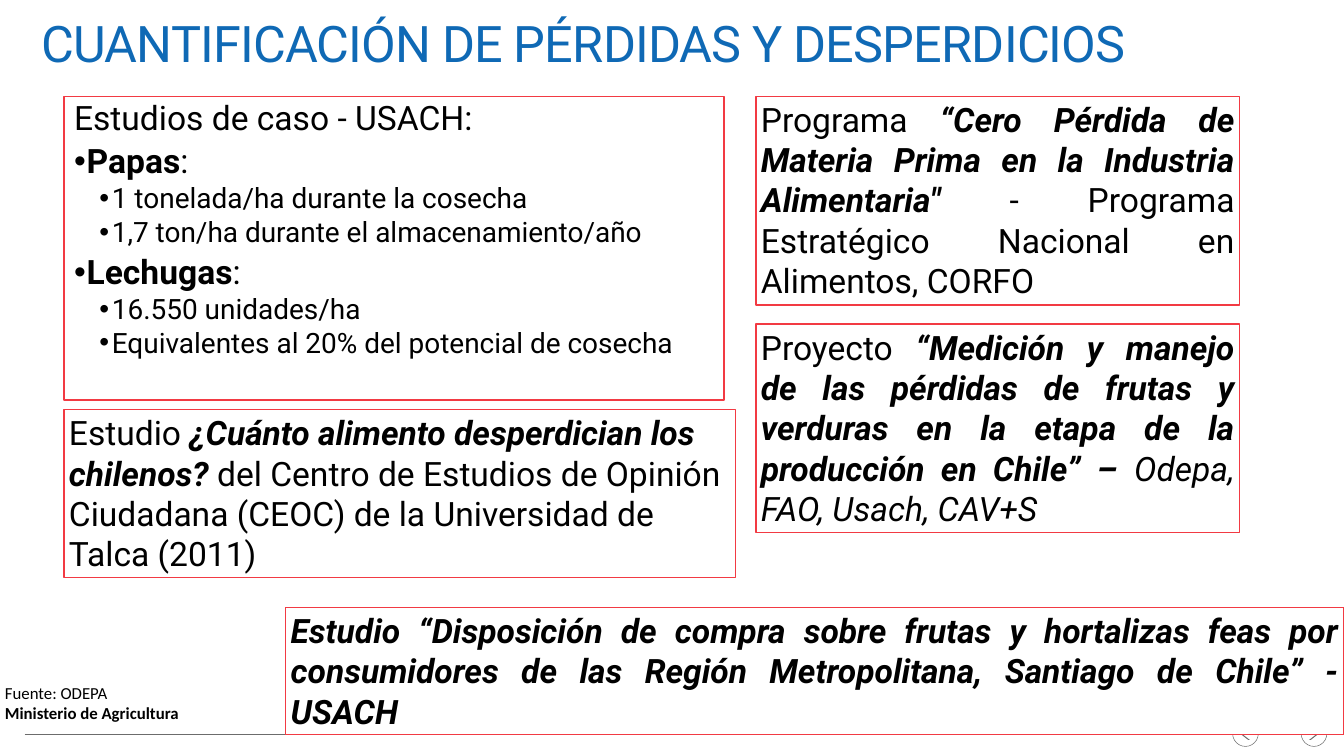
from lxml import etree
from pptx import Presentation, util as u
from pptx.dml.color import RGBColor
from pptx.enum import shapes, text
from pptx.oxml.ns import qn

BLUE = RGBColor(0x0F, 0x69, 0xB5)
RED = RGBColor(0xF2, 0x3A, 0x43)
GRAY = RGBColor(0x6C, 0x6C, 0x6C)
BLACK = RGBColor(0, 0, 0)
WHITE = RGBColor(0xFF, 0xFF, 0xFF)

BOLD = {"bold": True}
ITALIC = {"italic": True}
STRONG = {"bold": True, "italic": True}
JUSTIFY = text.PP_ALIGN.JUSTIFY
LEFT = text.PP_ALIGN.LEFT

CASES = [
    ("intro", [("Estudios de caso - USACH:", {})]),
    ("crop", [("Papas", BOLD), (":", {})]),
    ("detail", [("1 tonelada/ha durante la cosecha", {})]),
    ("detail", [("1,7 ton/ha durante el almacenamiento/año", {})]),
    ("crop", [("Lechugas", BOLD), (":", {})]),
    ("detail", [("16.550 unidades/ha", {})]),
    ("detail", [("Equivalentes al 20% del potencial de cosecha", {})]),
]
CASE_STYLES = {
    "intro": {"level": 0, "size": 48, "before": 0, "margin": 0, "bullet": None},
    "crop": {"level": 0, "size": 48, "before": 10, "margin": 0.25, "bullet": "•"},
    "detail": {"level": 1, "size": 40, "before": 5, "margin": 0.75, "bullet": "•"},
}
STUDIES = [
    ((15, 1.91, 9.6, 4.14), JUSTIFY, [
        ("Programa ", {}),
        ("“Cero Pérdida de Materia Prima en la Industria Alimentaria\" ", STRONG),
        ("- Programa Estratégico Nacional en Alimentos, CORFO", {})]),
    ((15, 6.43, 9.6, 4.14), JUSTIFY, [
        ("Proyecto ", {}),
        ("“Medición y manejo de las pérdidas de frutas y verduras en la etapa "
         "de la producción en Chile” – ", STRONG),
        ("Odepa, FAO, Usach, CAV+S", ITALIC)]),
    ((1.27, 8.13, 13.33, 3.33), LEFT, [
        ("Estudio ", {}),
        ("¿Cuánto alimento desperdician los chilenos?", STRONG),
        (" del Centro de Estudios de Opinión Ciudadana (CEOC) de la "
         "Universidad de Talca (2011)", {})]),
    ((5.67, 12.05, 21, 2.52), JUSTIFY, [
        ("Estudio “Disposición de compra sobre frutas y hortalizas feas por "
         "consumidores de las Región Metropolitana, Santiago de Chile” - USACH", STRONG)]),
]


def set_attributes(target, values):
    """Set every named value on the target."""
    for name, value in values.items():
        setattr(target, name, value)


def place(shape, left, top, width, height):
    """Move and size a shape in inches."""
    set_attributes(shape, {"left": u.Inches(left), "top": u.Inches(top),
                           "width": u.Inches(width), "height": u.Inches(height)})


def add_runs(paragraph, runs, size, font="Roboto", color=BLACK):
    """Add formatted runs to a paragraph."""
    for wording, emphasis in runs:
        run = paragraph.add_run()
        run.text = wording
        set_attributes(run.font, {"name": font, "size": u.Pt(size),
                                  "bold": False, "italic": False, **emphasis})
        run.font.color.rgb = color


def set_frame(frame, horizontal=0.1, vertical=0.05, **values):
    """Set wrapping, insets and anchor of a text frame."""
    set_attributes(frame, {
        "word_wrap": True, "vertical_anchor": text.MSO_ANCHOR.TOP,
        "margin_left": u.Inches(horizontal), "margin_right": u.Inches(horizontal),
        "margin_top": u.Inches(vertical), "margin_bottom": u.Inches(vertical), **values})


def set_border(shape):
    """Give a box its white fill and red outline."""
    shape.fill.solid()
    shape.fill.fore_color.rgb = WHITE
    shape.line.color.rgb = RED
    shape.line.width = u.Pt(2)


def set_bullet(paragraph, margin, character):
    """Set the hanging indent and bullet of a paragraph."""
    properties = paragraph._p.get_or_add_pPr()
    properties.set("marL", str(u.Inches(margin)))
    properties.set("indent", str(u.Inches(-0.25 if character else 0)))
    bullet = etree.SubElement(properties, qn("a:buChar" if character else "a:buNone"))
    if character:
        bullet.set("char", character)


def add_title(slide):
    """Fill the title placeholder."""
    title = slide.shapes.title
    place(title, 0.77, 0.19, 24.97, 1.3)
    set_frame(title.text_frame, horizontal=0.05, auto_size=text.MSO_AUTO_SIZE.NONE,
              vertical_anchor=text.MSO_ANCHOR.MIDDLE)
    paragraph = title.text_frame.paragraphs[0]
    paragraph.alignment = LEFT
    add_runs(paragraph, [("CUANTIFICACIÓN DE PÉRDIDAS Y DESPERDICIOS", {})], 72, color=BLUE)
    paragraph.runs[0].font._element.set("spc", "-120")


def add_cases(slide):
    """Fill the body placeholder with the case studies."""
    body = slide.placeholders[1]
    place(body, 1.27, 1.91, 13.1, 6.03)
    set_border(body)
    frame = body.text_frame
    set_frame(frame, horizontal=0.2, vertical=0.1, auto_size=text.MSO_AUTO_SIZE.NONE)
    for index, (kind, runs) in enumerate(CASES):
        style = CASE_STYLES[kind]
        paragraph = frame.add_paragraph() if index else frame.paragraphs[0]
        set_bullet(paragraph, style["margin"], style["bullet"])
        set_attributes(paragraph, {"level": style["level"], "line_spacing": 0.9,
                                   "space_before": u.Pt(style["before"])})
        add_runs(paragraph, runs, style["size"])


def add_study(slide, box, alignment, runs):
    """Add a framed study description."""
    shape = slide.shapes.add_shape(shapes.MSO_SHAPE.RECTANGLE, *map(u.Inches, box))
    shape.shadow.inherit = False
    set_border(shape)
    set_frame(shape.text_frame, auto_size=text.MSO_AUTO_SIZE.SHAPE_TO_FIT_TEXT)
    paragraph = shape.text_frame.paragraphs[0]
    paragraph.alignment = alignment
    add_runs(paragraph, runs, 48)


def add_source(slide):
    """Add the source note."""
    box = slide.shapes.add_textbox(*map(u.Inches, (0, 13.5, 9, 0.8)))
    set_frame(box.text_frame)
    add_runs(box.text_frame.paragraphs[0], [("Fuente: ODEPA", {})], 24, "Calibri")
    add_runs(box.text_frame.add_paragraph(), [("Ministerio de Agricultura", BOLD)], 24, "Calibri")


def add_arrow_button(slide, left, chevron_left, rotation):
    """Add a round navigation button with a chevron."""
    circle = slide.shapes.add_shape(
        shapes.MSO_SHAPE.OVAL, *map(u.Inches, (left, 14.3, 0.51, 0.51)))
    circle.shadow.inherit = False
    circle.fill.background()
    circle.line.color.rgb = GRAY
    circle.line.width = u.Pt(0.75)
    chevron = slide.shapes.add_shape(
        shapes.MSO_SHAPE.CHEVRON, *map(u.Inches, (chevron_left, 14.42, 0.2, 0.26)))
    chevron.shadow.inherit = False
    chevron.adjustments[0] = 0.84
    chevron.rotation = rotation
    chevron.fill.solid()
    chevron.fill.fore_color.rgb = GRAY
    chevron.line.fill.background()


def add_footer_line(slide):
    """Add the thin line along the foot of the slide."""
    line = slide.shapes.add_connector(
        shapes.MSO_CONNECTOR.STRAIGHT, *map(u.Inches, (0.49, 14.56, 24.46, 14.56)))
    line.line.color.rgb = GRAY
    line.line.width = u.Pt(0.75)
    etree.SubElement(line._element.spPr, qn("a:effectLst"))


def main():
    """Build and save the slide."""
    presentation = Presentation()
    presentation.slide_width = u.Inches(26.67)
    presentation.slide_height = u.Inches(15)
    slide = presentation.slides.add_slide(presentation.slide_layouts[1])
    add_arrow_button(slide, 25.82, 25.98, 0)
    add_arrow_button(slide, 24.46, 24.6, 180)
    add_footer_line(slide)
    add_title(slide)
    add_source(slide)
    add_cases(slide)
    for box, alignment, runs in STUDIES:
        add_study(slide, box, alignment, runs)
    presentation.save("out.pptx")


if __name__ == "__main__":
    main()
